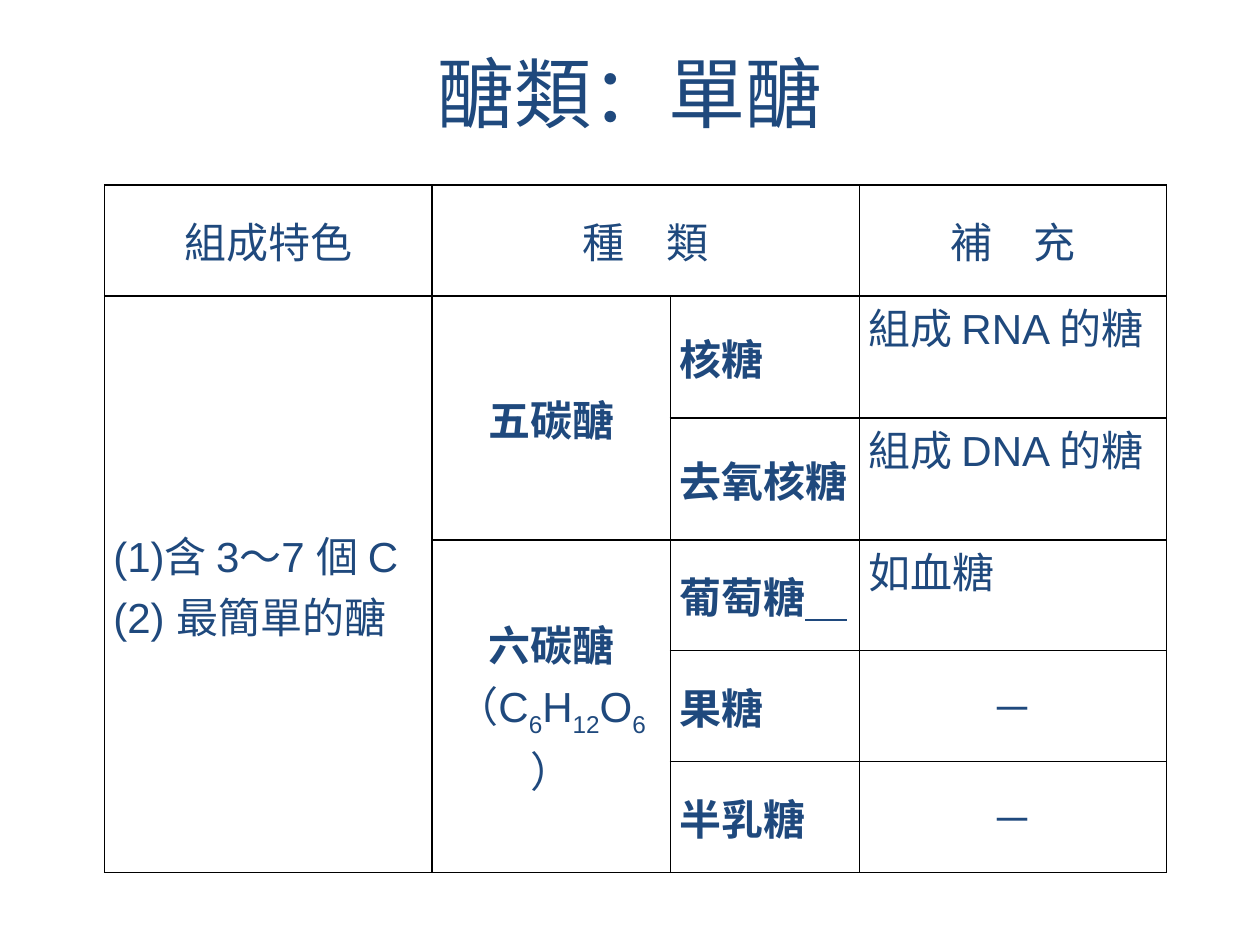
from lxml import etree
from pptx import Presentation
from pptx.dml.color import RGBColor
from pptx.enum.text import MSO_ANCHOR, PP_ALIGN
from pptx.oxml.ns import qn
from pptx.util import Inches, Pt

CENTER, JUSTIFY, LEFT = PP_ALIGN.CENTER, PP_ALIGN.JUSTIFY, PP_ALIGN.LEFT
MIDDLE, TOP = MSO_ANCHOR.MIDDLE, MSO_ANCHOR.TOP

THEME = {
    "ink": RGBColor(0x1F, 0x49, 0x7D),
    "border": "000000",
    "border_width": Pt(1),
    "title_font": "Calibri",
    "body_font": "Arial",
    "cjk_font": "Noto Sans CJK TC",
    "title_size": Pt(44),
    "body_size": Pt(24),
}

# A run is (text, style); the style letters are b = bold, u = underline, s = subscript.
TITLE = [("醣類", ""), ("：單醣", "")]
FORMULA = [("（C", ""), ("6", "s"), ("H", ""), ("12", "s"), ("O", ""), ("6", "s"), ("）", "")]

# (row, column, rows spanned, columns spanned, alignment, anchor, paragraphs)
CELLS = [
    (0, 0, 1, 1, CENTER, MIDDLE, [[("組成特色", "")]]),
    (0, 1, 1, 2, CENTER, MIDDLE, [[("種　類", "")]]),
    (0, 3, 1, 1, CENTER, MIDDLE, [[("補　充", "")]]),
    (1, 0, 5, 1, JUSTIFY, MIDDLE, [[("(1)含 3～7 個 C", "")], [("(2) 最簡單的醣", "")]]),
    (1, 1, 2, 1, CENTER, MIDDLE, [[("五碳醣", "b")]]),
    (1, 2, 1, 1, JUSTIFY, MIDDLE, [[("核糖", "b")]]),
    (1, 3, 1, 1, JUSTIFY, TOP, [[("組成 RNA 的糖", "")]]),
    (2, 2, 1, 1, JUSTIFY, MIDDLE, [[("去氧核糖", "b")]]),
    (2, 3, 1, 1, LEFT, TOP, [[("組成 DNA 的糖", "")]]),
    (3, 1, 3, 1, CENTER, MIDDLE, [[("六碳醣", "b")], FORMULA]),
    (3, 2, 1, 1, JUSTIFY, MIDDLE, [[("葡萄糖", "b"), ("　", "bu")]]),
    (3, 3, 1, 1, LEFT, TOP, [[("如血糖", "")]]),
    (4, 2, 1, 1, JUSTIFY, MIDDLE, [[("果糖", "b")]]),
    (4, 3, 1, 1, CENTER, MIDDLE, [[("－", "")]]),
    (5, 2, 1, 1, JUSTIFY, MIDDLE, [[("半乳糖", "b")]]),
    (5, 3, 1, 1, CENTER, MIDDLE, [[("－", "")]]),
]
COLUMN_WIDTHS = [2.6, 1.89, 1.5, 2.44]
ROW_COUNT, ROW_HEIGHT = 6, 0.88


def add_runs(p, runs, font, size):
    for text, style in runs:
        r = p.add_run()
        r.text = text
        r.font.name, r.font.size = font, size
        r.font.color.rgb = THEME["ink"]
        r.font.bold = "b" in style
        r.font.underline = "u" in style
        rPr = r.font._element
        if "s" in style:
            rPr.set("baseline", "-25000")
        latin = rPr.find(qn("a:latin"))
        ea = etree.Element(qn("a:ea"), typeface=THEME["cjk_font"])
        latin.addnext(ea)


def add_borders(cell):
    tcPr = cell._tc.get_or_add_tcPr()
    for i, side in enumerate(("lnL", "lnR", "lnT", "lnB")):
        ln = etree.Element(qn(f"a:{side}"), w=str(THEME["border_width"]))
        fill = etree.SubElement(ln, qn("a:solidFill"))
        etree.SubElement(fill, qn("a:srgbClr"), val=THEME["border"])
        tcPr.insert(i, ln)


def add_table(slide):
    frame = slide.shapes.add_table(
        ROW_COUNT, len(COLUMN_WIDTHS), Inches(0.83), Inches(1.47),
        Inches(sum(COLUMN_WIDTHS)), Inches(ROW_COUNT * ROW_HEIGHT))
    table = frame.table
    table.first_row = table.horz_banding = False
    for column, width in zip(table.columns, COLUMN_WIDTHS):
        column.width = Inches(width)
    for row in table.rows:
        row.height = Inches(ROW_HEIGHT)
    for cell in table.iter_cells():
        cell.margin_left = cell.margin_right = Inches(0.07)
        cell.margin_top = cell.margin_bottom = 0
        cell.fill.background()
        add_borders(cell)
    for row, col, rows, cols, align, anchor, paragraphs in CELLS:
        cell = table.cell(row, col)
        if rows * cols > 1:
            cell.merge(table.cell(row + rows - 1, col + cols - 1))
        cell.vertical_anchor = anchor
        tf = cell.text_frame
        for i, runs in enumerate(paragraphs):
            p = tf.add_paragraph() if i else tf.paragraphs[0]
            p.alignment = align
            add_runs(p, runs, THEME["body_font"], THEME["body_size"])


def add_title(slide):
    title = slide.shapes.title
    title.left, title.top = Inches(0.5), Inches(0.3)
    title.width, title.height = Inches(9), Inches(0.85)
    tf = title.text_frame
    tf.vertical_anchor = MIDDLE
    p = tf.paragraphs[0]
    p.alignment = CENTER
    add_runs(p, TITLE, THEME["title_font"], THEME["title_size"])


def main():
    prs = Presentation()
    prs.slide_width, prs.slide_height = Inches(10), Inches(7.5)
    slide = prs.slides.add_slide(prs.slide_layouts.get_by_name("Title Only"))
    add_title(slide)
    add_table(slide)
    prs.save("out.pptx")


if __name__ == "__main__":
    main()
